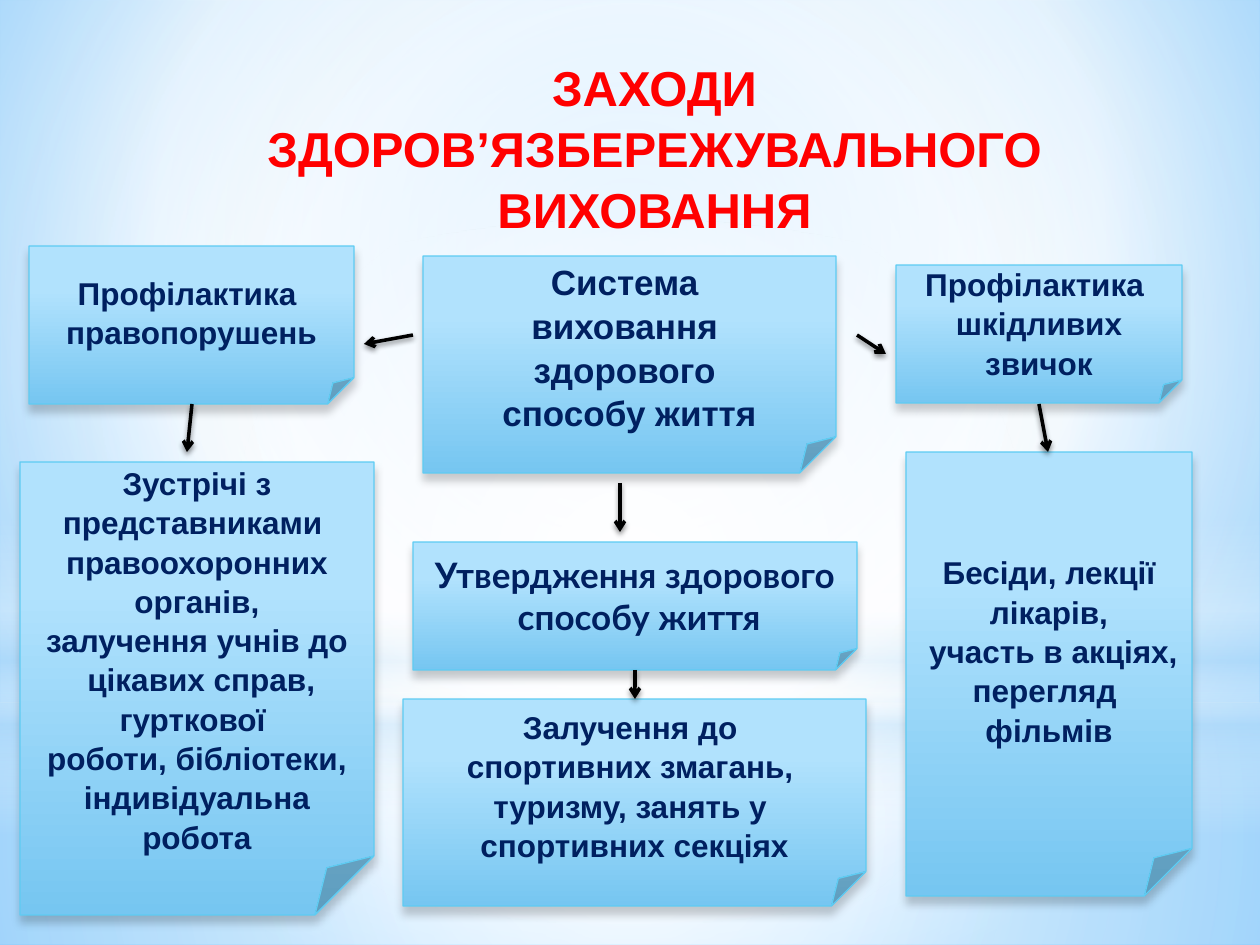
from lxml import etree
from pptx import Presentation, util as u
from pptx.dml.color import RGBColor
from pptx.enum import shapes, text
from pptx.oxml.ns import nsdecls, qn

EMU_PER_PX = 914400 / 126
W, H = 1260, 945
C = {
    "title": "FF0000", "text": "002060", "border": "5ECCF3", "arrow": "000000",
    "card_top": "B1E2FD", "card_bottom": "76C6F1", "white": "FFFFFF",
    "haze": "B4DCFA", "sky": "9ED5FF", "sky_edge": "5BB9FF", "shadow": "000000",
}
CENTRE = (50, 50, 50, 50)


def px(n):
    return u.Emu(round(n * EMU_PER_PX))


def rgb(name):
    return RGBColor.from_string(C[name])


def set_gradient(fill, parent, stops, focus=None):
    """Fill with (position, colour, opacity) stops: circular around focus, else downwards."""
    fill.solid()
    gs = "".join(
        f'<a:gs pos="{pos * 1000}"><a:srgbClr val="{C[name]}">'
        f'<a:alpha val="{alpha * 1000}"/></a:srgbClr></a:gs>'
        for pos, name, alpha in stops)
    if focus:
        l, t, r, b = (v * 1000 for v in focus)
        way = (f'<a:path path="circle"><a:fillToRect l="{l}" t="{t}" '
               f'r="{r}" b="{b}"/></a:path>')
    else:
        way = '<a:lin ang="5400000" scaled="0"/>'
    solid = parent.find(qn("a:solidFill"))
    parent.replace(solid, etree.fromstring(
        f'<a:gradFill {nsdecls("a")} rotWithShape="1"><a:gsLst>{gs}</a:gsLst>{way}</a:gradFill>'))


def set_shadow(sp, alpha, blur, dist):
    spPr = sp._element.spPr
    for old in spPr.findall(qn("a:effectLst")):
        spPr.remove(old)
    spPr.append(etree.fromstring(
        f'<a:effectLst {nsdecls("a")}><a:outerShdw blurRad="{u.Pt(blur)}" dist="{u.Pt(dist)}" '
        f'dir="5400000" rotWithShape="0"><a:srgbClr val="{C["shadow"]}">'
        f'<a:alpha val="{alpha * 1000}"/></a:srgbClr></a:outerShdw></a:effectLst>'))


def write(tf, lines, size, color, font="Arial"):
    tf.word_wrap = True
    tf.text = "\n".join(lines)
    for p in tf.paragraphs:
        p.alignment = text.PP_ALIGN.CENTER
        if font == "Arial":
            p.line_spacing = 1.04
        for r in p.runs:
            r.font.name, r.font.size, r.font.bold = font, u.Pt(size), True
            r.font.color.rgb = rgb(color)


def add_backdrop(s, x, y, w, h):
    bg = s.background.fill
    bg.solid()
    set_gradient(bg, s._element.find(".//" + qn("p:bgPr")),
                 [(0, "sky", 100), (60, "white", 100), (100, "sky_edge", 100)], (20, 10, 20, 60))
    rect, oval = shapes.MSO_SHAPE.RECTANGLE, shapes.MSO_SHAPE.OVAL
    horizon = 703
    layers = [
        (rect, horizon, h - horizon,
         [(0, "white", 91), (37, "white", 76), (100, "haze", 79)], CENTRE),
        (rect, 0, horizon, [(0, "white", 89), (48, "white", 62), (100, "haze", 79)], CENTRE),
        (rect, 519, 315, [(0, "white", 0), (29, "white", 30), (45, "haze", 40),
                          (55, "white", 26), (65, "haze", 60), (100, "white", 0)], None),
        (oval, 220, 703, [(0, "white", 100), (56, "white", 0)], CENTRE),
    ]
    for kind, top, height, stops, focus in layers:
        sp = s.shapes.add_shape(kind, px(x), px(y + top), px(w), px(height))
        sp.shadow.inherit = False
        sp.line.fill.background()
        set_gradient(sp.fill, sp._element.spPr, stops, focus)


def add_title(s, x, y, w, h):
    tf = s.shapes.add_textbox(px(x), px(y), px(w), px(h)).text_frame
    write(tf, ["ЗАХОДИ ЗДОРОВ’ЯЗБЕРЕЖУВАЛЬНОГО ВИХОВАННЯ"], 28, "title")
    tf.auto_size = text.MSO_AUTO_SIZE.SHAPE_TO_FIT_TEXT


def add_card(s, x, y, w, h, lines, size=18, font="Arial"):
    sp = s.shapes.add_shape(shapes.MSO_SHAPE.FOLDED_CORNER, px(x), px(y), px(w), px(h))
    set_gradient(sp.fill, sp._element.spPr, [(28, "card_top", 100), (100, "card_bottom", 100)])
    sp.line.color.rgb, sp.line.width = rgb("border"), u.Pt(0.75)
    set_shadow(sp, 20, 5, 4)
    sp.text_frame.vertical_anchor = text.MSO_ANCHOR.MIDDLE
    write(sp.text_frame, lines, size, "text", font)


def add_arrow(s, x1, y1, x2, y2):
    cx = s.shapes.add_connector(shapes.MSO_CONNECTOR.STRAIGHT, px(x1), px(y1), px(x2), px(y2))
    cx.line.color.rgb, cx.line.width = rgb("arrow"), u.Pt(2)
    etree.SubElement(cx.line._get_or_add_ln(), qn("a:tailEnd"), type="arrow")
    set_shadow(cx, 45, 3.1, 1.8)


def add_scheme(s, x, y):
    """Three columns of cards joined by arrows, placed from the given corner."""
    cards = [
        (9, 0, 325, 158, ["Профілактика ", "правопорушень"]),
        (393, 296, 444, 128, ["Утвердження здорового", " способу життя"], 20, "Lato"),
        (403, 10, 413, 217, ["Система ", "виховання ", "здорового ", "способу життя"], 20),
        (886, 206, 286, 444,
         ["Бесіди, лекції лікарів,", " участь в акціях, перегляд ", "фільмів"]),
        (876, 19, 286, 138, ["Профілактика ", "шкідливих звичок"]),
        (0, 216, 354, 453,
         ["Зустрічі з представниками ", "правоохоронних органів,", "залучення учнів до",
          " цікавих справ, гурткової ", "роботи, бібліотеки,", "індивідуальна робота"]),
        (383, 453, 463, 207,
         ["Залучення до ", "спортивних змагань, ", "туризму, занять у ", "спортивних секціях"]),
    ]
    arrows = [
        (393, 89, 344, 98), (837, 89, 866, 108), (600, 237, 600, 286),
        (172, 158, 167, 206), (1019, 158, 1028, 206), (615, 424, 615, 453),
    ]
    for left, top, *rest in cards:
        add_card(s, x + left, y + top, *rest)
    for x1, y1, x2, y2 in arrows:
        add_arrow(s, x + x1, y + y1, x + x2, y + y2)


def main():
    prs = Presentation()
    prs.slide_width, prs.slide_height = px(W), px(H)
    s = prs.slides.add_slide(prs.slide_layouts[6])
    add_backdrop(s, 0, 0, W, H)
    add_title(s, 187, 49, 935, 190)
    add_scheme(s, 20, 246)
    prs.save("out.pptx")


if __name__ == "__main__":
    main()
